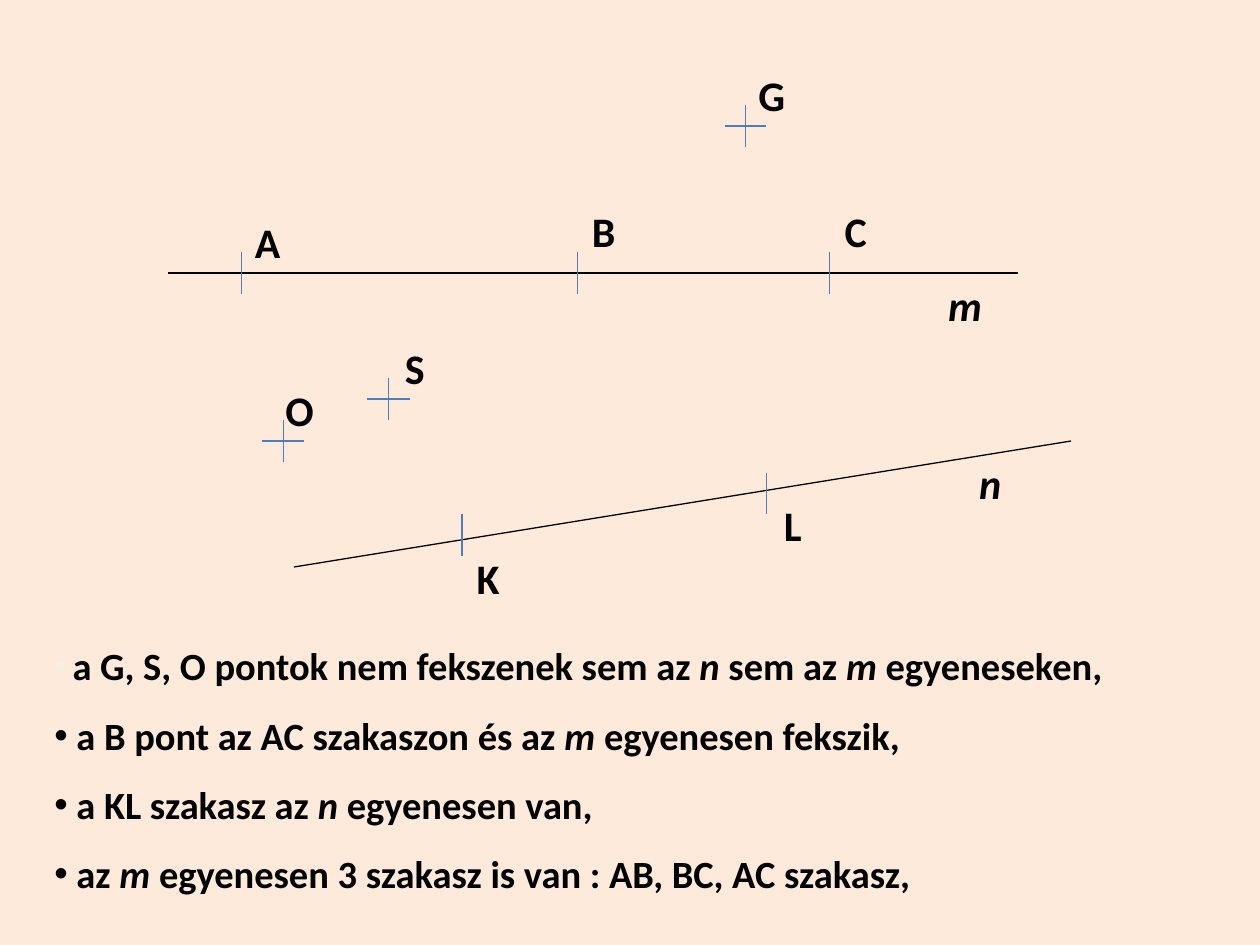
from dataclasses import dataclass

from lxml import etree
from pptx import Presentation
from pptx import util as u
from pptx.dml.color import RGBColor
from pptx.enum import shapes, text
from pptx.oxml import ns

PX = 7620  # EMU per px, 120 px to the inch
HALF = 20  # half the length of a point mark


@dataclass(frozen=True)
class Theme:
    font: str = "Calibri"
    background: str = "FDEADA"
    ink: str = "000000"
    mark: str = "4B7EBC"
    faint: str = "F4F1E3"
    label_size: int = 24
    body_size: int = 22
    faint_size: int = 18
    line_width: float = 0.75


@dataclass(frozen=True)
class Line:
    x1: int
    y1: int
    x2: int
    y2: int


@dataclass(frozen=True)
class Label:
    text: str
    x: int
    y: int
    w: int = 50
    italic: bool = False


@dataclass(frozen=True)
class Point:
    x: int
    y: int
    label: Label
    cross: bool = False


THEME = Theme()

LINES = [Line(160, 260, 970, 260), Line(280, 540, 1020, 420)]

POINTS = [
    Point(230, 260, Label("A", 230, 200)),
    Point(550, 260, Label("B", 550, 190)),
    Point(790, 260, Label("C", 790, 190)),
    Point(440, 510, Label("K", 440, 520)),
    Point(730, 470, Label("L", 730, 470)),
    Point(710, 120, Label("G", 710, 60), cross=True),
    Point(370, 380, Label("S", 370, 320), cross=True),
    Point(270, 420, Label("O", 260, 360), cross=True),
]

LINE_NAMES = [Label("n", 920, 430, 46, True), Label("m", 890, 260, 58, True)]

# Upright and italic pieces alternate, starting upright
STATEMENTS = [
    ["a G, S, O pontok nem fekszenek sem az ", "n", " sem az ", "m ", "egyeneseken,"],
    [" a B pont az AC szakaszon és az ", "m ", "egyenesen fekszik,"],
    [" a KL szakasz az ", "n ", "egyenesen van,"],
    [" az ", "m ", "egyenesen 3 szakasz is van : AB, BC, AC szakasz,"],
]


def draw_line(s, line: Line, color: str) -> None:
    ends = [v * PX for v in (line.x1, line.y1, line.x2, line.y2)]
    c = s.shapes.add_connector(shapes.MSO_CONNECTOR.STRAIGHT, *ends)
    c.line.color.rgb = RGBColor.from_string(color)
    c.line.width = u.Pt(THEME.line_width)
    etree.SubElement(c._element.spPr, ns.qn("a:effectLst"))


def style_run(r, size: int, color: str = THEME.ink, italic: bool = False) -> None:
    r.font.name = THEME.font
    r.font.size = u.Pt(size)
    r.font.bold = True
    r.font.italic = italic
    r.font.color.rgb = RGBColor.from_string(color)


def add_box(s, x: int, y: int, w: int, h: int, wrap: bool = True):
    tf = s.shapes.add_textbox(x * PX, y * PX, w * PX, h * PX).text_frame
    tf.word_wrap = wrap
    tf.auto_size = text.MSO_AUTO_SIZE.SHAPE_TO_FIT_TEXT
    return tf


def draw_label(s, label: Label) -> None:
    tf = add_box(s, label.x, label.y, label.w, 60, wrap=not label.italic)
    tf.text = label.text
    p = tf.paragraphs[0]
    p.alignment = text.PP_ALIGN.CENTER
    style_run(p.runs[0], THEME.label_size, italic=label.italic)


def draw_point(s, pt: Point) -> None:
    draw_line(s, Line(pt.x, pt.y - HALF, pt.x, pt.y + HALF), THEME.mark)
    if pt.cross:
        draw_line(s, Line(pt.x - HALF, pt.y, pt.x + HALF, pt.y), THEME.mark)
    draw_label(s, pt.label)


def draw_statements(s, statements: list[list[str]]) -> None:
    tf = add_box(s, 40, 584, 1124, 316)
    for i, pieces in enumerate(statements):
        p = tf.add_paragraph() if i else tf.paragraphs[0]
        p.line_spacing = 1.5
        pPr = p._p.get_or_add_pPr()
        etree.SubElement(pPr, ns.qn("a:buFont"), typeface="Arial")
        etree.SubElement(pPr, ns.qn("a:buChar"), char="•")
        if i == 0:  # the faint lead-in also sets the colour of the first bullet
            p.text = " "
            style_run(p.runs[0], THEME.faint_size, THEME.faint)
        for j, piece in enumerate(pieces):
            r = p.add_run()
            r.text = piece
            style_run(r, THEME.body_size, italic=j % 2 == 1)


def main() -> None:
    prs = Presentation()
    prs.slide_width, prs.slide_height = 1200 * PX, 900 * PX
    s = prs.slides.add_slide(prs.slide_layouts[6])
    s.background.fill.solid()
    s.background.fill.fore_color.rgb = RGBColor.from_string(THEME.background)

    # Lines m and n
    for line in LINES:
        draw_line(s, line, THEME.ink)

    # Marked points and names of the lines
    for pt in POINTS:
        draw_point(s, pt)
    for label in LINE_NAMES:
        draw_label(s, label)

    # Statements below the figure
    draw_statements(s, STATEMENTS)
    prs.save("out.pptx")


if __name__ == "__main__":
    main()
